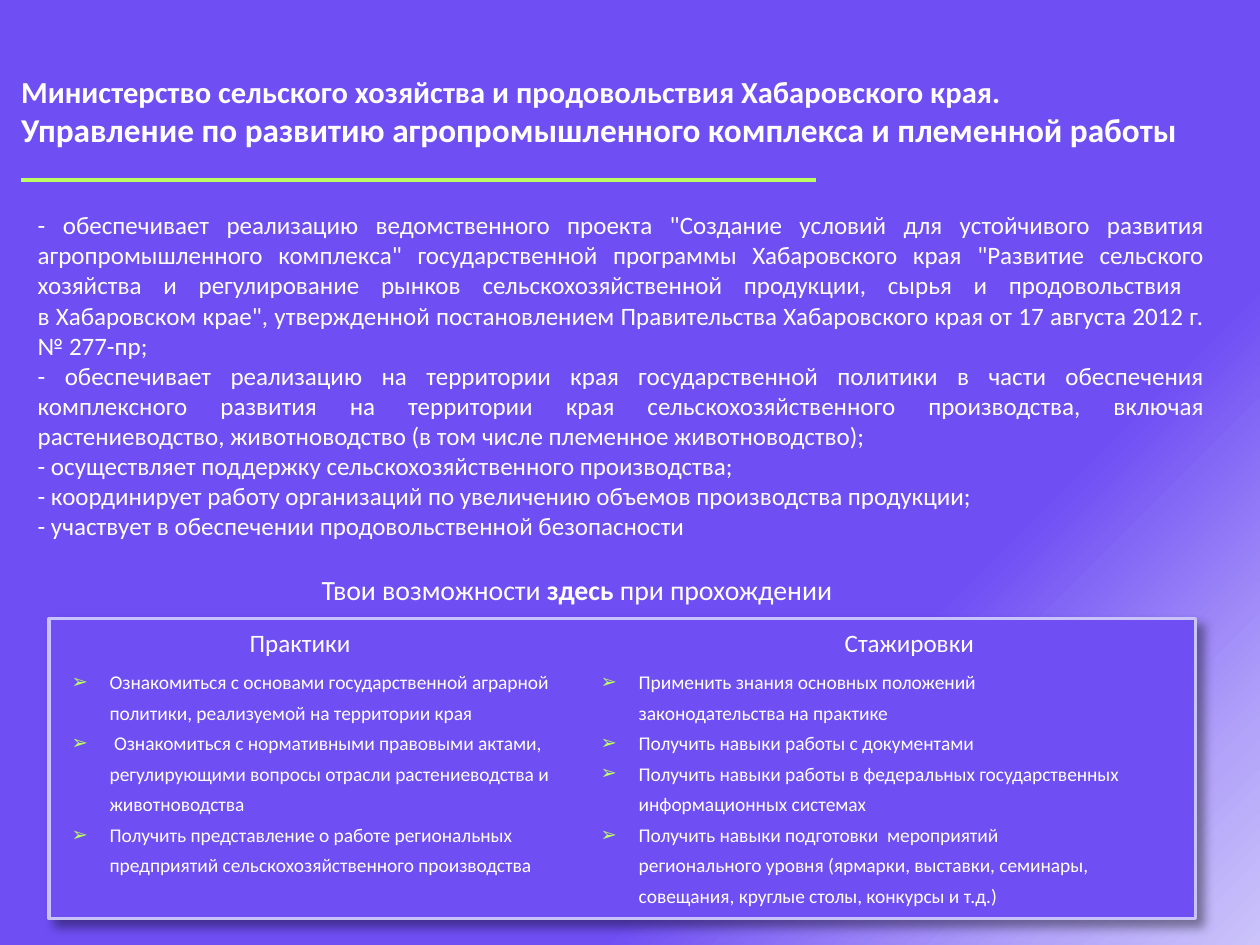
"""Builds a slide about a ministry department and its opportunities for trainees."""
from lxml import etree
from pptx import Presentation, oxml
from pptx import util as u
from pptx.dml.color import RGBColor
from pptx.enum import shapes, text
from pptx.oxml import ns

PX = 4572
WHITE = RGBColor(0xFF, 0xFF, 0xFF)
VIOLET = RGBColor(0x6F, 0x4E, 0xF4)
LAVENDER = RGBColor(0xCA, 0xC2, 0xFA)
LIME = RGBColor(0xBD, 0xFE, 0x63)
GLOW = [(0, "CBC3FA"), (10, "B3A4F9"), (30, VIOLET), (76, VIOLET)]

TITLE = [
    ("Министерство сельского хозяйства и продовольствия Хабаровского края.\n", 11),
    ("Управление по развитию агропромышленного комплекса и племенной работы", 12),
]
DUTIES = [
    '- обеспечивает реализацию ведомственного проекта "Создание условий для устойчивого '
    'развития агропромышленного комплекса" государственной программы Хабаровского края '
    '"Развитие сельского хозяйства и регулирование рынков сельскохозяйственной продукции, '
    'сырья и продовольствия \nв Хабаровском крае", утвержденной постановлением '
    'Правительства Хабаровского края от 17 августа 2012 г. № 277-пр;',
    "- обеспечивает реализацию на территории края государственной политики в части "
    "обеспечения комплексного развития на территории края сельскохозяйственного "
    "производства, включая растениеводство, животноводство (в том числе племенное "
    "животноводство);",
    "- осуществляет поддержку сельскохозяйственного производства;",
    "- координирует работу организаций по увеличению объемов производства продукции;",
    "- участвует в обеспечении продовольственной безопасности",
]
PRACTICE = [
    "Ознакомиться с основами государственной аграрной политики, реализуемой на "
    "территории края",
    " Ознакомиться с нормативными правовыми актами, регулирующими вопросы отрасли "
    "растениеводства и животноводства",
    "Получить представление о работе региональных предприятий сельскохозяйственного "
    "производства",
]
INTERNSHIP = [
    "Применить знания основных положений законодательства на практике",
    "Получить навыки работы с документами",
    "Получить навыки работы в федеральных государственных информационных системах",
    "Получить навыки подготовки  мероприятий регионального уровня (ярмарки, выставки, "
    "семинары, совещания, круглые столы, конкурсы и т.д.)",
]


class SlideBuilder:
    """Holds the style and the current slide, and adds elements to it."""

    font = "Calibri"
    stroke = u.Pt(1.1)

    def __init__(self, deck):
        self.page = deck.slides.add_slide(deck.slide_layouts[5])

    def background(self, stops):
        """Fills the page with a glow from the lower right corner."""
        marks = "".join(
            f'<a:gs pos="{place * 1000}"><a:srgbClr val="{color}"/></a:gs>'
            for place, color in stops
        )
        self.page.element.cSld.insert(0, oxml.parse_xml(
            f'<p:bg {ns.nsdecls("p", "a")}><p:bgPr><a:gradFill rotWithShape="1">'
            f'<a:gsLst>{marks}</a:gsLst><a:path path="circle">'
            '<a:fillToRect l="100000" t="100000"/></a:path></a:gradFill>'
            '<a:effectLst/></p:bgPr></p:bg>'
        ))

    def span(self, para, words, size, bold=False):
        """Adds a run, turning line feeds into line breaks."""
        for number, line in enumerate(words.split("\n")):
            if number:
                para.add_line_break()
            if line:
                span = para.add_run()
                span.text = line
                span.font.name = self.font
                span.font.size = u.Pt(size)
                span.font.bold = bold
                span.font.color.rgb = WHITE

    def title(self, left, top, width, height, parts):
        """Places the title and fills it run by run."""
        box = self.page.shapes.title
        box.left, box.top, box.width, box.height = (
            n * PX for n in (left, top, width, height))
        frame = box.text_frame
        frame.auto_size = text.MSO_AUTO_SIZE.NONE
        frame.vertical_anchor = text.MSO_ANCHOR.MIDDLE
        frame.margin_left = frame.margin_right = 21 * PX
        frame.margin_top = frame.margin_bottom = 6 * PX
        para = frame.paragraphs[0]
        para.alignment = text.PP_ALIGN.LEFT
        for words, size in parts:
            self.span(para, words, size, True)

    def textbox(self, left, top, width, height, paras, size, wrap=True,
                align=None, bullets=False):
        """Adds a text box; each paragraph is a string or a list of (words, bold)."""
        box = self.page.shapes.add_textbox(
            *(n * PX for n in (left, top, width, height)))
        frame = box.text_frame
        frame.word_wrap = wrap
        frame.auto_size = text.MSO_AUTO_SIZE.SHAPE_TO_FIT_TEXT
        for number, content in enumerate(paras):
            para = frame.add_paragraph() if number else frame.paragraphs[0]
            para.alignment = align
            if bullets:
                self.bullet(para)
            parts = [(content, False)] if isinstance(content, str) else content
            for words, bold in parts:
                self.span(para, words, size, bold)

    def bullet(self, para):
        """Gives a paragraph a lime arrow, a hanging indent and fixed spacing."""
        props = para._p.get_or_add_pPr()
        props.set("marL", str(38 * PX))
        props.set("indent", str(-38 * PX))
        color = etree.SubElement(props, ns.qn("a:buClr"))
        etree.SubElement(color, ns.qn("a:srgbClr"), val=str(LIME))
        etree.SubElement(props, ns.qn("a:buFont"), typeface=self.font)
        etree.SubElement(props, ns.qn("a:buChar"), char="➢")
        para.line_spacing = u.Pt(11)

    def rule(self, left, right, y):
        """Adds a horizontal lime line."""
        line = self.page.shapes.add_connector(
            shapes.MSO_CONNECTOR.STRAIGHT, left * PX, y * PX, right * PX, y * PX)
        line.line.color.rgb = LIME
        line.line.width = self.stroke
        etree.SubElement(line._element.spPr, ns.qn("a:effectLst"))

    def panel(self, left, top, width, height):
        """Adds an outlined rectangle with a soft shadow."""
        box = self.page.shapes.add_shape(
            shapes.MSO_SHAPE.RECTANGLE, *(n * PX for n in (left, top, width, height)))
        box.fill.solid()
        box.fill.fore_color.rgb = VIOLET
        box.line.color.rgb = LAVENDER
        box.line.width = self.stroke
        box.shadow.inherit = False
        effects = box._element.spPr.find(ns.qn("a:effectLst"))
        effects.append(oxml.parse_xml(
            f'<a:outerShdw {ns.nsdecls("a")} blurRad="{u.Pt(4)}" dist="{u.Pt(3)}" '
            'dir="2700000" algn="tl" rotWithShape="0"><a:srgbClr val="000000">'
            '<a:alpha val="40000"/></a:srgbClr></a:outerShdw>'
        ))


def main():
    """Builds and saves the deck."""
    deck = Presentation()
    deck.slide_width, deck.slide_height = 1260 * PX, 945 * PX
    slide = SlideBuilder(deck)
    slide.background(GLOW)
    slide.title(0, 43, 1244, 136, TITLE)
    slide.textbox(18, 200, 1204, 354, DUTIES, 9, align=text.PP_ALIGN.JUSTIFY)
    slide.rule(21, 816, 180)
    slide.panel(49, 619, 1147, 300)
    invitation = [("Твои возможности ", False), ("здесь", True), (" при прохождении", False)]
    slide.textbox(302, 563, 562, 54, [invitation], 10, wrap=False)
    columns = [
        ("Практики", 230, 142, PRACTICE, 52),
        ("Стажировки", 825, 170, INTERNSHIP, 581),
    ]
    for heading, heading_left, heading_width, items, left in columns:
        slide.textbox(heading_left, 618, heading_width, 50, [heading], 9, wrap=False)
        slide.textbox(left, 653, 564, 298, items, 7, bullets=True)
    deck.save("out.pptx")


if __name__ == "__main__":
    main()
